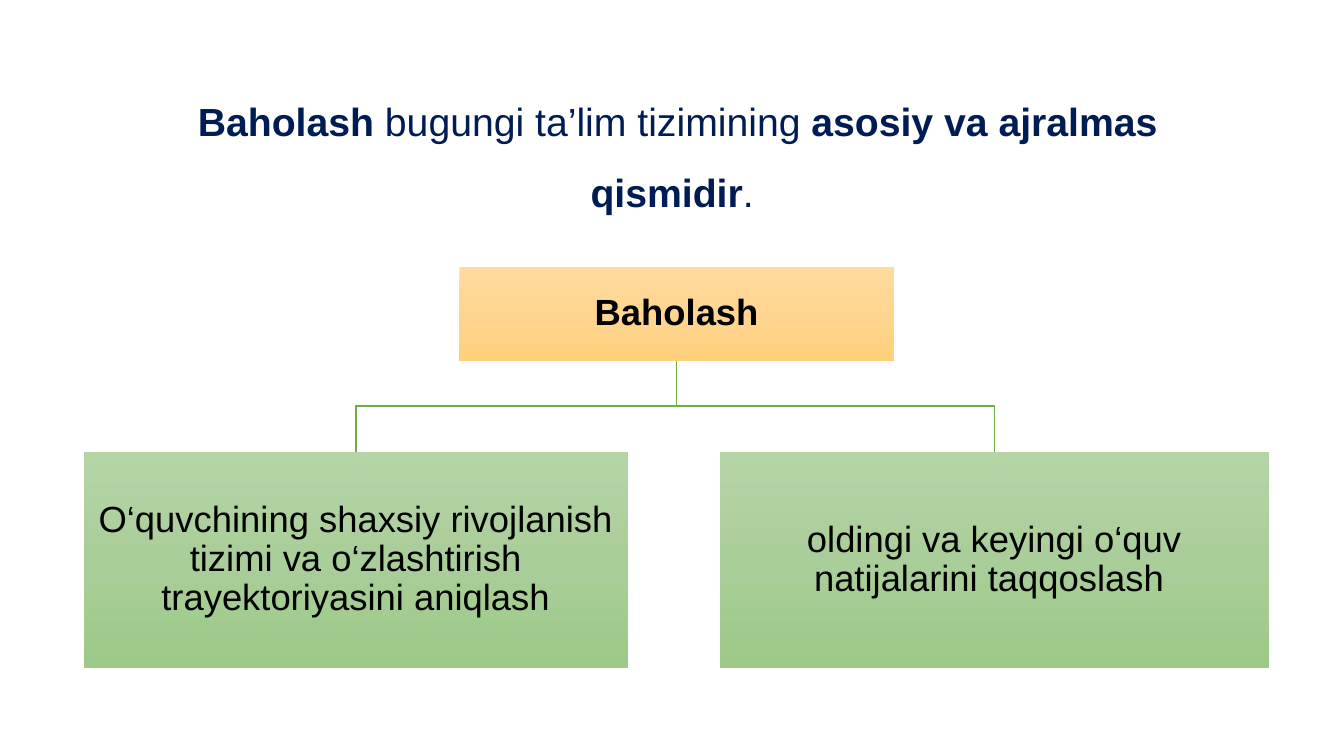
from copy import deepcopy

from pptx import Presentation
from pptx.dml.color import RGBColor
from pptx.enum.shapes import MSO_SHAPE
from pptx.enum.text import MSO_ANCHOR, MSO_AUTO_SIZE, PP_ALIGN
from pptx.oxml.ns import qn
from pptx.util import Cm, Pt

FONT = "Arial"
NAVY = RGBColor(0x00, 0x1C, 0x54)
BLACK = RGBColor(0x00, 0x00, 0x00)
LINK_GREEN = RGBColor(0x70, 0xAD, 0x47)
ORANGES = (RGBColor(0xFF, 0xDB, 0x9E), RGBColor(0xFF, 0xD5, 0x90), RGBColor(0xFF, 0xD0, 0x7C))
GREENS = (RGBColor(0xB5, 0xD5, 0xA7), RGBColor(0xAA, 0xCE, 0x9A), RGBColor(0x9C, 0xC9, 0x87))

HEADLINE = (
    ("Baholash ", True),
    ("bugungi ta’lim tizimining ", False),
    ("asosiy va ajralmas qismidir", True),
    (". ", False),
)
BRANCHES = (
    ("O‘quvchining shaxsiy rivojlanish tizimi va o‘zlashtirish trayektoriyasini aniqlash",
     2.11, 13.72),
    ("oldingi va keyingi o‘quv natijalarini taqqoslash ", 18.14, 13.84),
)


def format_run(run, size, color, bold):
    run.font.name = FONT
    run.font.size = Pt(size)
    run.font.color.rgb = color
    run.font.bold = bold


def fill_title(title):
    title.left, title.top, title.width, title.height = Cm(3.53), Cm(1.73), Cm(27.89), Cm(3.84)
    text_frame = title.text_frame
    text_frame.word_wrap = True
    text_frame.auto_size = MSO_AUTO_SIZE.SHAPE_TO_FIT_TEXT
    text_frame.vertical_anchor = MSO_ANCHOR.TOP
    text_frame.margin_right = Cm(1.05)
    paragraph = text_frame.paragraphs[0]
    paragraph.alignment = PP_ALIGN.CENTER
    paragraph.line_spacing = 1.5
    for text, bold in HEADLINE:
        run = paragraph.add_run()
        run.text = text
        format_run(run, 28, NAVY, bold)


def fill_gradient(shape, colors):
    """Fill from top to bottom with three evenly spaced colours."""
    fill = shape.fill
    fill.gradient()
    fill.gradient_angle = 270
    stop_list = next(shape._element.iter(qn("a:gsLst")))
    stop_list.insert(1, deepcopy(stop_list[0]))
    for index, (stop, color) in enumerate(zip(fill.gradient_stops, colors)):
        stop.position = index / 2
        stop.color.rgb = color


def add_box(shapes, text, left, top, width, height, colors, bold=False):
    box = shapes.add_shape(MSO_SHAPE.RECTANGLE, Cm(left), Cm(top), Cm(width), Cm(height))
    box.shadow.inherit = False
    box.line.fill.background()
    fill_gradient(box, colors)
    text_frame = box.text_frame
    text_frame.word_wrap = True
    text_frame.vertical_anchor = MSO_ANCHOR.MIDDLE
    text_frame.margin_left = text_frame.margin_right = Cm(0.05)
    text_frame.margin_top = text_frame.margin_bottom = Cm(0.05)
    text_frame.text = text
    paragraph = text_frame.paragraphs[0]
    paragraph.alignment = PP_ALIGN.CENTER
    paragraph.line_spacing = 0.9
    format_run(paragraph.runs[0], 26, BLACK, bold)
    return box


def add_link(shapes, parent, child):
    """Draw a stepped line from the parent's bottom to the child's top."""
    start_x = parent.left + parent.width // 2
    end_x = child.left + child.width // 2
    start_y = parent.top + parent.height
    middle_y = (start_y + child.top) // 2
    builder = shapes.build_freeform(start_x, start_y)
    builder.add_line_segments(
        [(start_x, middle_y), (end_x, middle_y), (end_x, child.top)], close=False)
    link = builder.convert_to_shape()
    link.shadow.inherit = False
    link.fill.background()
    link.line.color.rgb = LINK_GREEN
    link.line.width = Pt(1)


def main():
    presentation = Presentation()
    presentation.slide_width = Cm(33.87)
    presentation.slide_height = Cm(19.05)
    slide = presentation.slides.add_slide(presentation.slide_layouts.get_by_name("Title Only"))
    fill_title(slide.shapes.title)

    diagram = slide.shapes.add_group_shape().shapes
    root = add_box(diagram, "Baholash", 11.58, 6.73, 10.95, 2.36, ORANGES, bold=True)
    for text, left, width in BRANCHES:
        branch = add_box(diagram, text, left, 11.38, width, 5.46, GREENS)
        add_link(diagram, root, branch)

    presentation.save("out.pptx")


if __name__ == "__main__":
    main()
